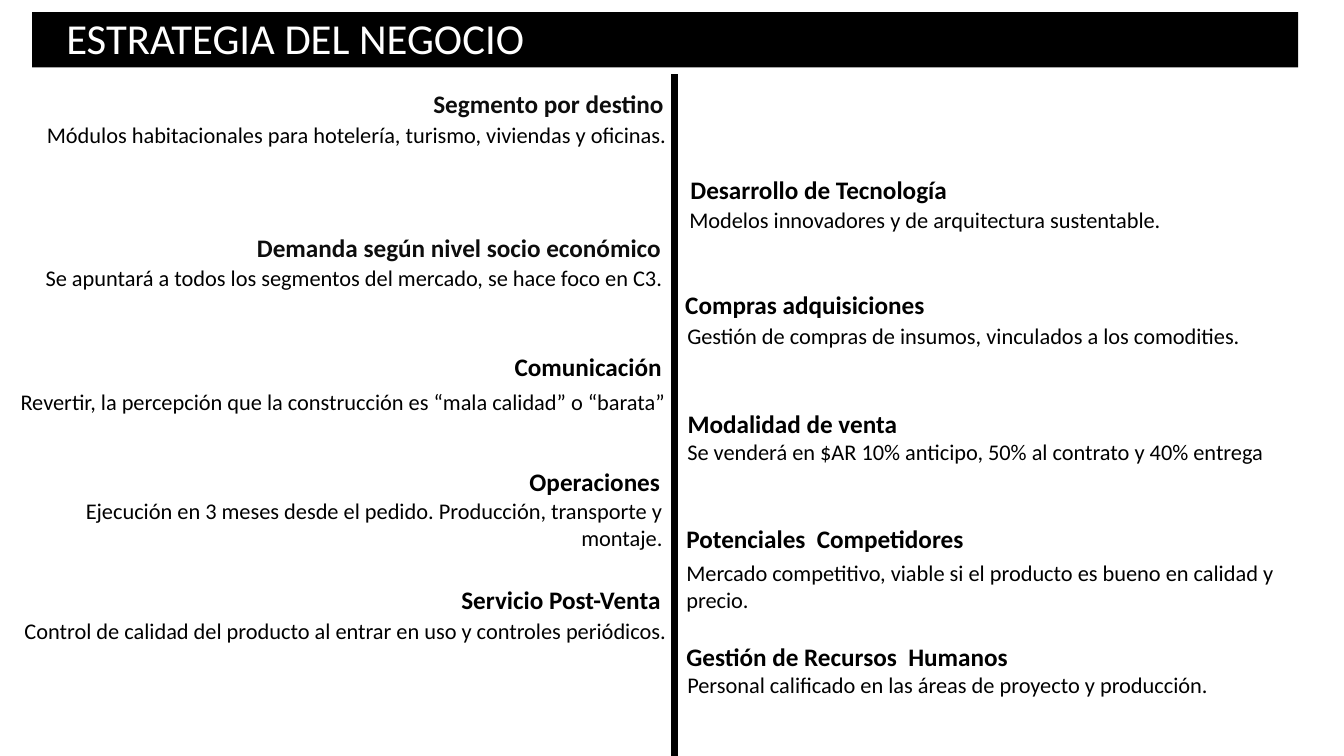
"""Build the business strategy slide: a title bar and topics on both sides of a spine."""
from dataclasses import dataclass

from lxml import etree
from pptx import Presentation
from pptx.dml.color import RGBColor
from pptx.enum.shapes import MSO_CONNECTOR, MSO_SHAPE
from pptx.enum.text import MSO_ANCHOR, PP_ALIGN
from pptx.oxml.ns import qn
from pptx.slide import Slide
from pptx.util import Inches, Pt

LEFT, MID, RIGHT, JUST = PP_ALIGN.LEFT, PP_ALIGN.CENTER, PP_ALIGN.RIGHT, PP_ALIGN.JUSTIFY
TOP = MSO_ANCHOR.TOP
RECT = MSO_SHAPE.RECTANGLE
STRAIGHT = MSO_CONNECTOR.STRAIGHT
WIDE, HIGH = Inches(13.33), Inches(7.5)


@dataclass(frozen=True)
class Theme:
    """Hold the colours and type sizes."""
    font: str = "Calibri"
    ink: str = "000000"
    soft: str = "0D0D0D"
    paper: str = "FFFFFF"
    title: float = 30.5
    head: float = 18
    body: float = 16
    rule: float = 4.5
    lead: float = 10


@dataclass(frozen=True)
class Box:
    """Place an area on a grid of 100 columns by 100 rows."""
    col: float
    row: float
    cols: float
    rows: float


@dataclass(frozen=True)
class Label:
    """Describe one text and its format."""
    text: str
    box: Box
    size: float
    ink: str
    align: PP_ALIGN = LEFT
    bold: bool = False
    pitch: float = 1.0


THEME = Theme()
BAR = Box(2.4, 1.6, 94.2, 7.33)
SPINE = Box(50.18, 9.73, 0, 90.27)
TITLE = Label("ESTRATEGIA DEL NEGOCIO", Box(4.2, 2.27, 94.28, 6.8),
              THEME.title, THEME.paper, pitch=0.8)


def head(text: str, col: float, row: float, cols: float, align: PP_ALIGN = LEFT,
         ink: str = THEME.ink, pitch: float = 1.0) -> Label:
    """Describe a topic heading."""
    return Label(text, Box(col, row, cols, 5.33), THEME.head, ink, align, True, pitch)


def body(text: str, col: float, row: float, cols: float, align: PP_ALIGN = LEFT,
         lines: int = 1) -> Label:
    """Describe the text of a topic."""
    return Label(text, Box(col, row, cols, 1.33 + 3.6 * lines), THEME.body, THEME.ink, align)


TOPICS = [
    head("Segmento por destino", 31.5, 11.07, 18.9, ink=THEME.soft),
    body("Módulos habitacionales para hotelería, turismo, viviendas y oficinas.",
         1.58, 15.33, 48.75, RIGHT),
    head("Demanda según nivel socio económico", 18.38, 30.53, 31.8,
         ink=THEME.soft, pitch=0.9),
    body("Se apuntará a todos los segmentos del mercado, se hace foco en C3.",
         2.4, 34.27, 47.63, RIGHT),
    head("Comunicación", 37.5, 45.87, 12.53, MID),
    body("Revertir, la percepción que la construcción es “mala calidad” o “barata”",
         0, 50.67, 50.25, RIGHT),
    head("Operaciones", 38.63, 61.07, 11.25, MID),
    body("Ejecución en 3 meses desde el pedido. Producción, transporte y montaje.",
         1.43, 65.07, 48.6, RIGHT, 2),
    head("Servicio Post-Venta", 33.45, 76.67, 16.58, MID),
    body("Control de calidad del producto al entrar en uso y controles periódicos.",
         0.83, 80.93, 49.5, RIGHT),
    head("Desarrollo de Tecnología", 50.63, 22.4, 21.15),
    body("Modelos innovadores y de arquitectura sustentable.", 50.55, 26.67, 47.33),
    head("Compras adquisiciones", 50.18, 37.6, 19.43, MID),
    body("Gestión de compras de insumos, vinculados a los comodities.",
         50.4, 42, 46.73, JUST),
    head("Modalidad de venta", 50.33, 53.33, 17.25, MID),
    body("Se venderá en $AR 10% anticipo, 50% al contrato y 40% entrega",
         50.4, 57.33, 48.23),
    head("Potenciales  Competidores", 50.33, 68.53, 22.73),
    body("Mercado competitivo, viable si el producto es bueno en calidad y precio.",
         50.33, 73.33, 46.2, lines=2),
    head("Gestión de Recursos  Humanos", 50.33, 84.13, 25.5),
    body("Personal calificado en las áreas de proyecto y producción.",
         50.4, 88.13, 42, JUST),
]


def place(box: Box) -> tuple[int, int, int, int]:
    """Turn grid units into slide lengths."""
    return (int(WIDE * box.col / 100), int(HIGH * box.row / 100),
            int(WIDE * box.cols / 100), int(HIGH * box.rows / 100))


def draw_bar(slide: Slide, box: Box) -> None:
    """Draw the band behind the title."""
    bar = slide.shapes.add_shape(RECT, *place(box))
    bar.shadow.inherit = False
    bar.fill.solid()
    bar.fill.fore_color.rgb = RGBColor.from_string(THEME.ink)
    bar.line.fill.background()


def draw_spine(slide: Slide, box: Box) -> None:
    """Draw the line between both sides."""
    left, top, width, height = place(box)
    spine = slide.shapes.add_connector(STRAIGHT, left, top + height, left + width, top)
    spine.line.color.rgb = RGBColor.from_string(THEME.ink)
    spine.line.width = Pt(THEME.rule)
    etree.SubElement(spine._element.spPr, qn("a:effectLst"))


def draw_label(slide: Slide, label: Label) -> None:
    """Draw one text box."""
    frame = slide.shapes.add_textbox(*place(label.box)).text_frame
    frame.word_wrap = label.align != MID
    frame.vertical_anchor = TOP
    frame.text = label.text
    para = frame.paragraphs[0]
    para.alignment = label.align
    if label.pitch < 1:
        para.line_spacing = label.pitch
        para.space_before = Pt(THEME.lead)
    font = para.runs[0].font
    font.name = THEME.font
    font.size = Pt(label.size)
    font.bold = label.bold
    font.color.rgb = RGBColor.from_string(label.ink)


def main() -> None:
    """Build and save the deck."""
    deck = Presentation()
    deck.slide_width, deck.slide_height = WIDE, HIGH
    slide = deck.slides.add_slide(deck.slide_layouts[6])
    draw_bar(slide, BAR)
    draw_spine(slide, SPINE)
    for label in [TITLE, *TOPICS]:
        draw_label(slide, label)
    deck.save("out.pptx")


if __name__ == "__main__":
    main()
